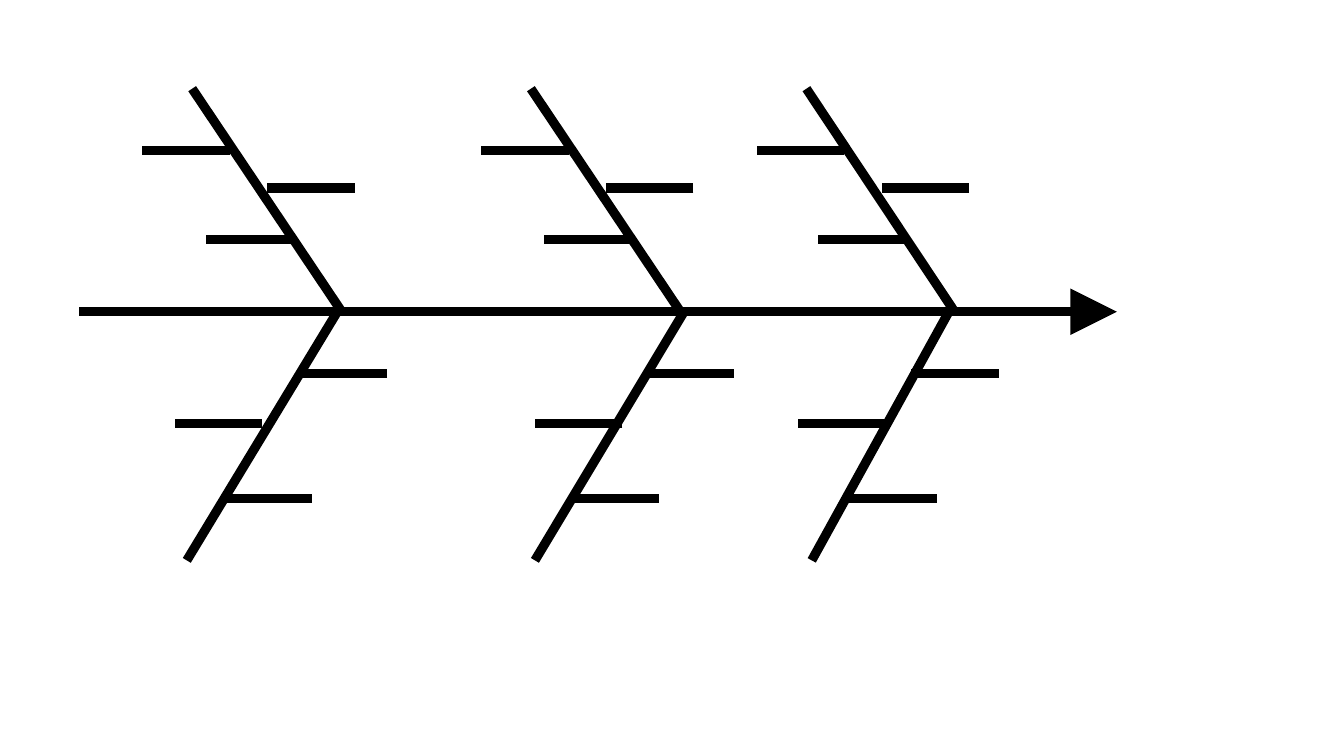
from lxml import etree
from pptx import Presentation
from pptx.dml.color import RGBColor
from pptx.enum.shapes import MSO_CONNECTOR
from pptx.oxml.ns import qn
from pptx.util import Inches, Pt

STRAIGHT = MSO_CONNECTOR.STRAIGHT
COLORS = {"line": "000000"}
LINE_WIDTH = 5
TWIG_LENGTH = 0.65

SPINE = ((0.59, 2.32), (8.31, 2.32))

# Each bone: x of its outer end, x of its joint with the spine, left ends of its twigs
SIDES = [
    {
        "outer_y": 0.66,
        "joint_y": 2.33,
        "twig_ys": (1.12, 1.78, 1.40),
        "bones": [
            (1.43, 2.55, (1.06, 1.53, 1.99)),
            (3.95, 5.07, (3.58, 4.05, 4.51)),
            (6.00, 7.11, (5.63, 6.09, 6.56)),
        ],
    },
    {
        "outer_y": 4.17,
        "joint_y": 2.32,
        "twig_ys": (3.15, 3.71, 2.78),
        "bones": [
            (1.39, 2.51, (1.30, 1.67, 2.23)),
            (3.98, 5.09, (3.98, 4.25, 4.81)),
            (6.04, 7.06, (5.94, 6.32, 6.78)),
        ],
    },
]


def add_line(shapes, start, end):
    points = [Inches(value) for value in (*start, *end)]
    connector = shapes.add_connector(STRAIGHT, *points)
    connector.line.width = Pt(LINE_WIDTH)
    connector.line.color.rgb = RGBColor.from_string(COLORS["line"])
    etree.SubElement(connector._element.spPr, qn("a:effectLst"))
    return connector


def add_arrowhead(connector):
    outline = connector._element.spPr.find(qn("a:ln"))
    etree.SubElement(outline, qn("a:tailEnd"), type="triangle", w="lg", len="lg")


def add_bone(slide, side, outer_x, joint_x, twig_xs):
    """Add one slanted branch and its twigs as a group."""
    shapes = slide.shapes.add_group_shape().shapes
    add_line(shapes, (joint_x, side["joint_y"]), (outer_x, side["outer_y"]))
    for x, y in zip(twig_xs, side["twig_ys"]):
        add_line(shapes, (x + TWIG_LENGTH, y), (x, y))


def main():
    deck = Presentation()
    deck.slide_width = Inches(10)
    deck.slide_height = Inches(10 * 9 / 16)
    slide = deck.slides.add_slide(deck.slide_layouts[6])

    add_arrowhead(add_line(slide.shapes, *SPINE))
    for side in SIDES:
        for bone in side["bones"]:
            add_bone(slide, side, *bone)

    deck.save("out.pptx")


if __name__ == "__main__":
    main()
